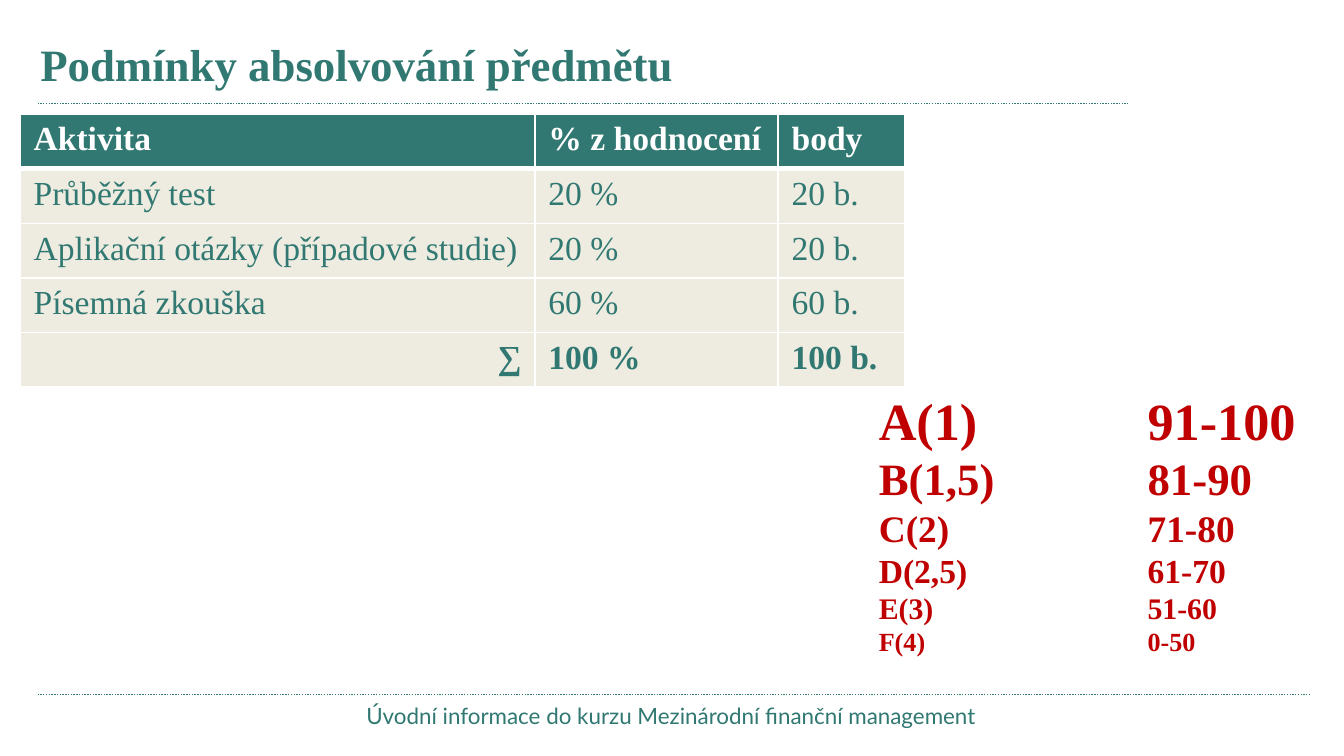
import pptx
import pptx.util
import pptx.dml.color
import pptx.enum.dml
import pptx.enum.shapes
import pptx.enum.text
import pptx.oxml
import pptx.oxml.ns
from lxml import etree
from pptx.util import Inches

GREEN = pptx.dml.color.RGBColor(0x30, 0x78, 0x71)
BEIGE = pptx.dml.color.RGBColor(0xEE, 0xEC, 0xE1)
WHITE = pptx.dml.color.RGBColor(0xFF, 0xFF, 0xFF)
RED = pptx.dml.color.RGBColor(0xC0, 0x00, 0x00)
ALIGN = pptx.enum.text.PP_ALIGN
ANCHOR = pptx.enum.text.MSO_ANCHOR

ACTIVITIES = [
    ("Aktivita", "% z hodnocení", "body"),
    ("Průběžný test", "20 %", "20 b."),
    ("Aplikační otázky (případové studie)", "20 %", "20 b."),
    ("Písemná zkouška", "60 %", "60 b."),
    ("∑", "100 %", "100 b."),
]
GRADES = [
    ("A(1)\t\t91-100", 28),
    ("B(1,5)\t\t81-90", 24),
    ("C(2)\t\t71-80", 20),
    ("D(2,5) \t\t61-70", 18),
    ("E(3)\t\t51-60", 16),
    ("F(4)\t\t0-50", 14),
]


def write(p, text, size=18, color=GREEN, bold=False, font="Times New Roman", align=ALIGN.LEFT):
    """Add formatted text to a paragraph."""
    p.alignment = align
    r = p.add_run()
    r.text = text
    r.font.name = font
    r.font.size = pptx.util.Pt(size)
    r.font.bold = bold
    r.font.color.rgb = color


class Deck:
    """Hold the style and the current slide."""

    def __init__(self, width):
        """Start a 16:9 presentation with one titled slide."""
        self.prs = pptx.Presentation()
        self.prs.slide_width = Inches(width)
        self.prs.slide_height = Inches(width * 9 / 16)
        self.s = self.prs.slides.add_slide(self.prs.slide_layouts[5])

    def title(self, text, x, y, w, h):
        """Fill and place the title placeholder."""
        sp = self.s.shapes.title
        sp.left, sp.top, sp.width, sp.height = map(Inches, (x, y, w, h))
        sp.text_frame.vertical_anchor = ANCHOR.MIDDLE
        sp.text_frame.margin_bottom = Inches(0.09)
        write(sp.text_frame.paragraphs[0], text, size=24, bold=True)

    def rule(self, x1, x2, y):
        """Draw a dotted horizontal line."""
        line = self.s.shapes.add_connector(
            pptx.enum.shapes.MSO_CONNECTOR.STRAIGHT, Inches(x1), Inches(y), Inches(x2), Inches(y))
        line.line.color.rgb = GREEN
        line.line.width = pptx.util.Pt(0.75)
        line.line.dash_style = pptx.enum.dml.MSO_LINE.ROUND_DOT
        etree.SubElement(line._element.spPr, pptx.oxml.ns.qn("a:effectLst"))

    def textbox(self, x, y, w, h, anchor=ANCHOR.TOP):
        """Add a wrapping text box and return its frame."""
        tf = self.s.shapes.add_textbox(Inches(x), Inches(y), Inches(w), Inches(h)).text_frame
        tf.word_wrap = True
        tf.vertical_anchor = anchor
        return tf

    def footer(self, text, x, y, w, h):
        """Add the centred footer line."""
        tf = self.textbox(x, y, w, h, ANCHOR.MIDDLE)
        write(tf.paragraphs[0], text, size=12, font="Lato", align=ALIGN.CENTER)

    def grades(self, rows, x, y, w, h, tabs):
        """Add the tabbed list of grades."""
        tf = self.textbox(x, y, w, h)
        for i, (text, size) in enumerate(rows):
            p = tf.add_paragraph() if i else tf.paragraphs[0]
            stops = etree.SubElement(p._p.get_or_add_pPr(), pptx.oxml.ns.qn("a:tabLst"))
            for pos in tabs:
                etree.SubElement(stops, pptx.oxml.ns.qn("a:tab"), pos=str(Inches(pos)), algn="l")
            write(p, text, size=size, color=RED, bold=True)

    def borders(self, cell, **widths):
        """Give a cell white borders, 1 pt unless a side is named."""
        tc_pr = cell._tc.get_or_add_tcPr()
        for side in ("lnL", "lnR", "lnT", "lnB"):
            width = pptx.util.Pt(widths.get(side, 1))
            tc_pr.append(pptx.oxml.parse_xml(
                f'<a:{side} {pptx.oxml.ns.nsdecls("a")} w="{width}"><a:solidFill>'
                f'<a:srgbClr val="{WHITE}"/></a:solidFill></a:{side}>'))

    def table(self, rows, x, y, widths, height):
        """Add a table with a header row and a total row."""
        last = len(rows) - 1
        table = self.s.shapes.add_table(
            len(rows), len(widths), Inches(x), Inches(y),
            Inches(sum(widths)), Inches(height)).table
        for col, width in zip(table.columns, widths):
            col.width = Inches(width)
        for i, row in enumerate(rows):
            for j, text in enumerate(row):
                cell = table.cell(i, j)
                self.borders(cell, lnB=3 if i == 0 else 1, lnT=3 if i == 1 else 1)
                cell.fill.solid()
                cell.fill.fore_color.rgb = BEIGE if i else GREEN
                write(cell.text_frame.paragraphs[0], text,
                      color=GREEN if i else WHITE, bold=i in (0, last),
                      align=ALIGN.RIGHT if (i, j) == (last, 0) else ALIGN.LEFT)


def main():
    """Build and save the slide."""
    deck = Deck(10)
    deck.rule(0.28, 8.39, 0.77)
    deck.rule(0.28, 9.75, 5.17)
    deck.title("Podmínky absolvování předmětu", 0.2, 0.21, 6.46, 0.56)
    deck.footer("Úvodní informace do kurzu Mezinárodní finanční management", 0.31, 5.17, 9.37, 0.31)
    deck.table(ACTIVITIES, 0.15, 0.85, (3.83, 1.81, 0.94), 2.03)
    deck.grades(GRADES, 6.44, 2.84, 3.45, 2.12, tabs=(1, 2))
    deck.prs.save("out.pptx")


if __name__ == "__main__":
    main()
